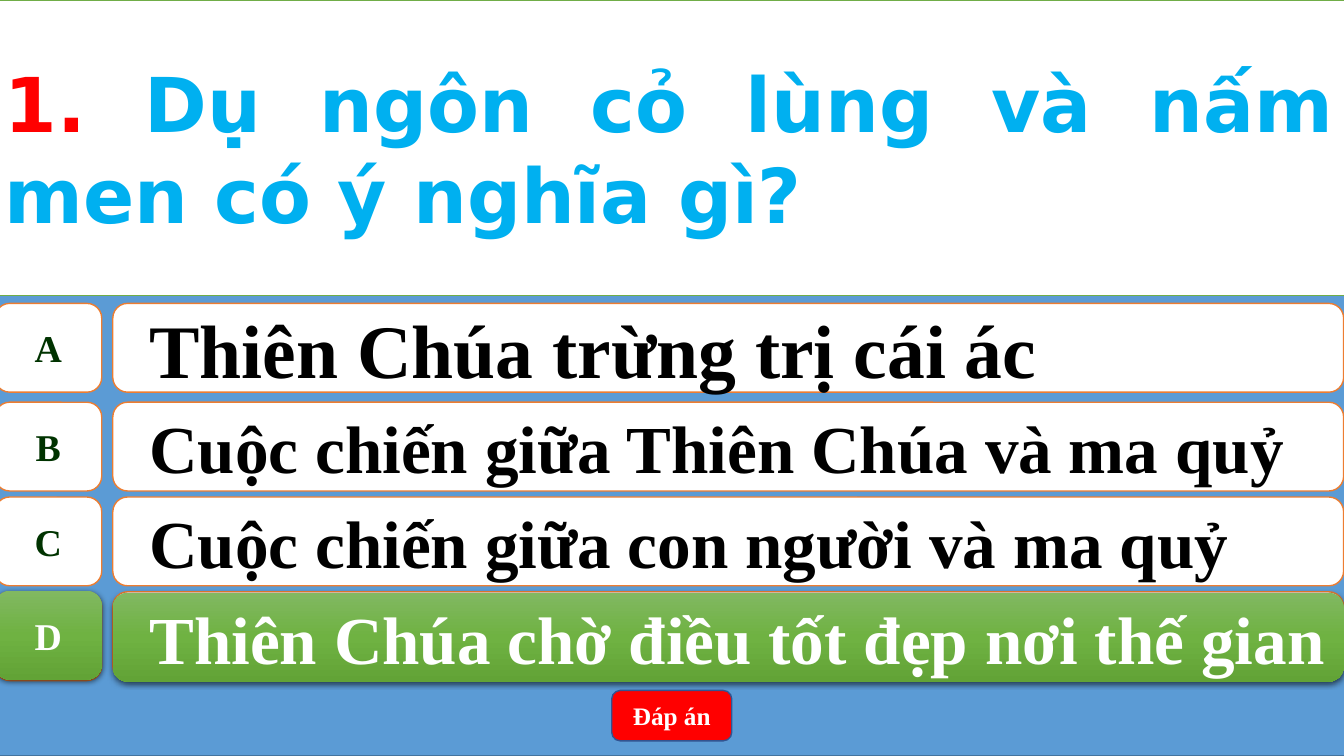
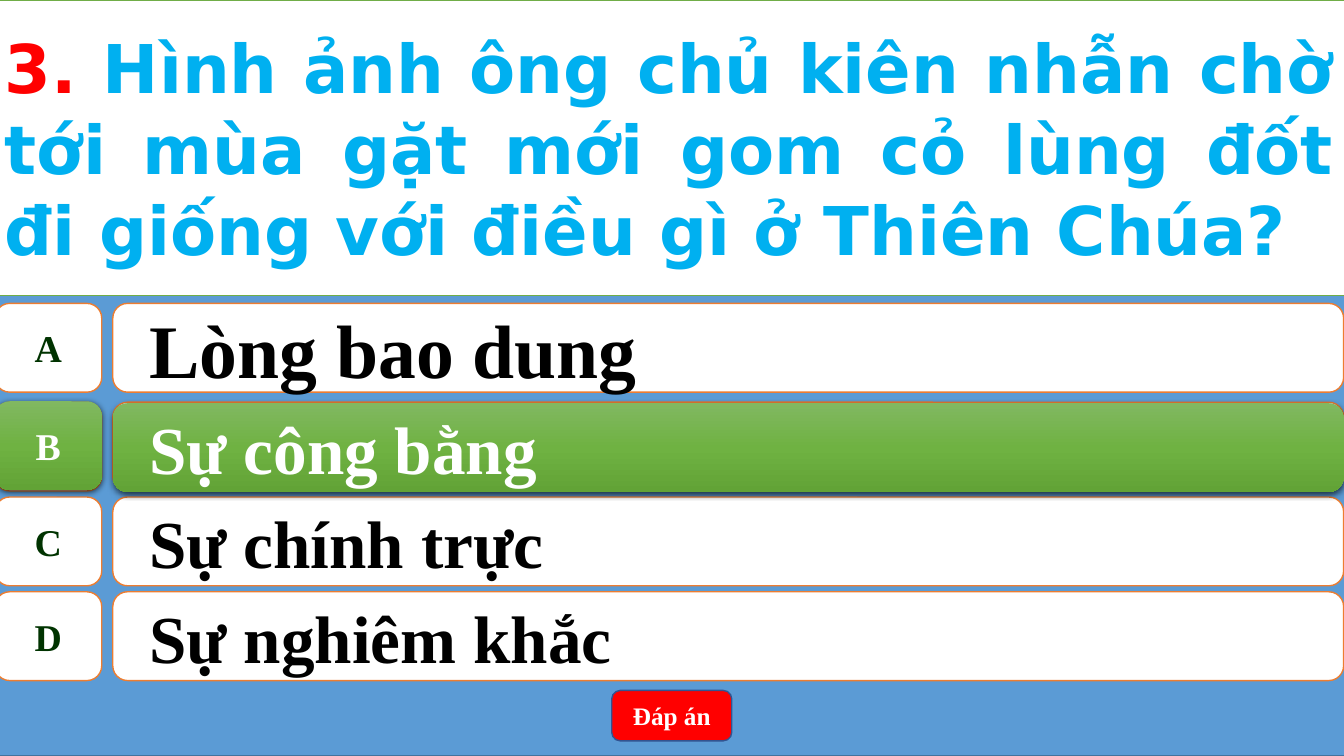
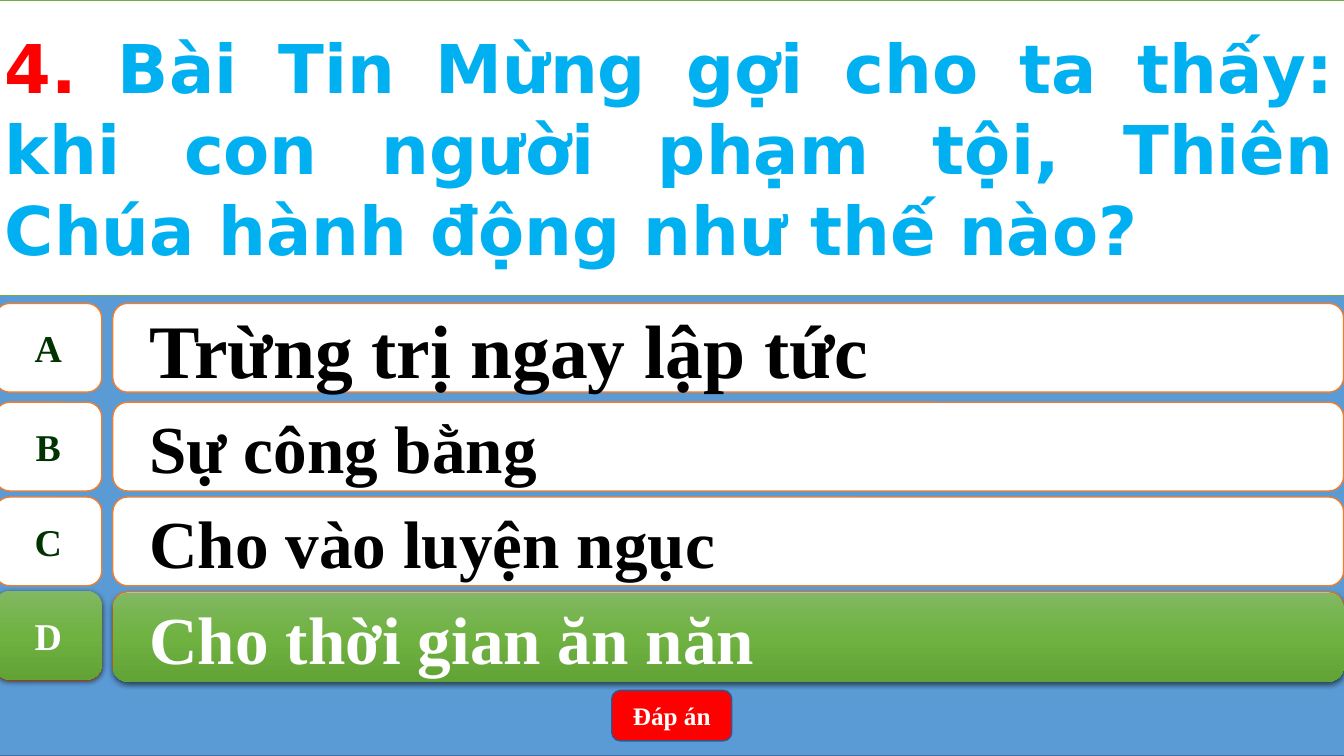
from pptx import Presentation
from pptx.dml.color import RGBColor
from pptx.enum.shapes import MSO_SHAPE as Preset
from pptx.enum.text import MSO_ANCHOR as Anchor, PP_ALIGN as Align
from pptx.oxml import parse_xml
from pptx.oxml.ns import nsdecls, qn
from pptx.util import Pt

QUESTIONS = [
    dict(number="1. ", text="Dụ ngôn cỏ lùng và nấm men có ý nghĩa gì?", size=54, correct=3,
         answers=["Thiên Chúa trừng trị cái ác",
                  "Cuộc chiến giữa Thiên Chúa và ma quỷ",
                  "Cuộc chiến giữa con người và ma quỷ",
                  "Thiên Chúa chờ điều tốt đẹp nơi thế gian"]),
    dict(number="3. ", size=48, correct=1,
         text="Hình ảnh ông chủ kiên nhẫn chờ tới mùa gặt mới gom cỏ lùng đốt đi "
              "giống với điều gì ở Thiên Chúa?",
         answers=["Lòng bao dung", "Sự công bằng", "Sự chính trực", "Sự nghiêm khắc"]),
    dict(number="4. ", size=48, correct=3,
         text="Bài Tin Mừng gợi cho ta thấy: khi con người phạm tội, "
              "Thiên Chúa hành động như thế nào?",
         answers=["Trừng trị ngay lập tức", "Sự công bằng",
                  "Cho vào luyện ngục", "Cho thời gian ăn năn"]),
]
BUTTON_TEXT = "Đáp án"
LETTERS = "ABCD"
ANSWER_SIZES = [54, 48, 48, 48]

COLORS = dict(back="5B9BD5", back_line="43739E", white="FFFFFF", orange="ED7D31",
              letter="003300", black="000000", red="FF0000", button_line="325491",
              green="70AD47", question="00B0F0")
GREEN_STOPS = [(0, "81B861"), (50, "6FB242"), (100, "62A336")]
SERIF, SANS = "Times New Roman", "DejaVu Sans"

WIDTH, HEIGHT = 960, 540
LEFT, BAND_WIDTH, QUESTION_HEIGHT = -3.6, 964, 211
LETTER_WIDTH, ANSWER_LEFT, ANSWER_WIDTH, ROW_HEIGHT = 76.3, 80.6, 879.2, 63.4
FIRST_TOP, SECOND_TOP, ROW_STEP = 216.7, 287.3, 67.7
BUTTON = (437, 493.2, 85.7, 36)
NUDGE = 0.7


def rgb(name):
    return RGBColor.from_string(COLORS[name])


def add_text(shape, *runs, size, font=SERIF, align=Align.CENTER, wrap=True, indent=None):
    frame = shape.text_frame
    frame.word_wrap = wrap
    frame.vertical_anchor = Anchor.MIDDLE
    para = frame.paragraphs[0]
    para.alignment = align
    if indent:
        para.level = 1
        properties = para._p.get_or_add_pPr()
        properties.set("marL", str(Pt(indent[0])))
        properties.set("indent", str(Pt(indent[1])))
    for text, color in runs:
        span = para.add_run()
        span.text = text
        span.font.name = font
        span.font.size = Pt(size)
        span.font.bold = True
        span.font.color.rgb = rgb(color)


def add_box(shapes, preset, place, fill=None, line=None):
    box = shapes.add_shape(preset, *map(Pt, place))
    box.shadow.inherit = False
    if fill:
        box.fill.solid()
        box.fill.fore_color.rgb = rgb(fill)
    if line:
        box.line.color.rgb = rgb(line)
        box.line.width = Pt(1)
    else:
        box.line.fill.background()
    return box


def highlight(box):
    stops = "".join(f'<a:gs pos="{position * 1000}"><a:srgbClr val="{color}"/></a:gs>'
                    for position, color in GREEN_STOPS)
    gradient = parse_xml(f'<a:gradFill {nsdecls("a")} rotWithShape="1"><a:gsLst>{stops}</a:gsLst>'
                         '<a:lin ang="5400000" scaled="0"/></a:gradFill>')
    properties = box._element.spPr
    properties.find(qn("a:prstGeom")).addnext(gradient)
    properties.find(qn("a:effectLst")).append(parse_xml(
        f'<a:outerShdw {nsdecls("a")} blurRad="{Pt(4.5)}" dist="{Pt(1.5)}" dir="5400000" '
        'algn="ctr" rotWithShape="0"><a:srgbClr val="000000"><a:alpha val="63000"/>'
        '</a:srgbClr></a:outerShdw>'))


def add_answer(page, row, answer, correct=False):
    top = SECOND_TOP + (row - 1) * ROW_STEP if row else FIRST_TOP
    nudge = NUDGE if correct else 0
    fill, line = (None, None) if correct else ("white", "orange")
    shapes = page.shapes.add_group_shape().shapes
    letter_box = add_box(shapes, Preset.FLOWCHART_ALTERNATE_PROCESS,
                         (LEFT, top - nudge, LETTER_WIDTH, ROW_HEIGHT), fill, line)
    answer_box = add_box(shapes, Preset.ROUNDED_RECTANGLE,
                         (ANSWER_LEFT, top + nudge, ANSWER_WIDTH, ROW_HEIGHT), fill, line)
    if correct:
        highlight(letter_box)
        highlight(answer_box)
    add_text(letter_box, (LETTERS[row], "white" if correct else "letter"), size=27, wrap=False)
    add_text(answer_box, (answer, "white" if correct else "black"),
             size=ANSWER_SIZES[row], align=Align.LEFT, indent=(36, -20))


def add_question(deck, question):
    page = deck.slides.add_slide(deck.slide_layouts[6])
    add_box(page.shapes, Preset.RECTANGLE, (LEFT, 0, BAND_WIDTH, HEIGHT), "back", "back_line")
    for row, answer in enumerate(question["answers"]):
        add_answer(page, row, answer)
    button = add_box(page.shapes, Preset.ROUNDED_RECTANGLE, BUTTON, "red", "button_line")
    add_text(button, (BUTTON_TEXT, "white"), size=18)
    correct = question["correct"]
    add_answer(page, correct, question["answers"][correct], correct=True)
    band = add_box(page.shapes, Preset.RECTANGLE, (LEFT, 0, BAND_WIDTH, QUESTION_HEIGHT),
                   "white", "green")
    add_text(band, (question["number"], "red"), (question["text"], "question"),
             size=question["size"], font=SANS, align=Align.JUSTIFY)


def main():
    deck = Presentation()
    deck.slide_width, deck.slide_height = Pt(WIDTH), Pt(HEIGHT)
    for question in QUESTIONS:
        add_question(deck, question)
    deck.save("out.pptx")


if __name__ == "__main__":
    main()
